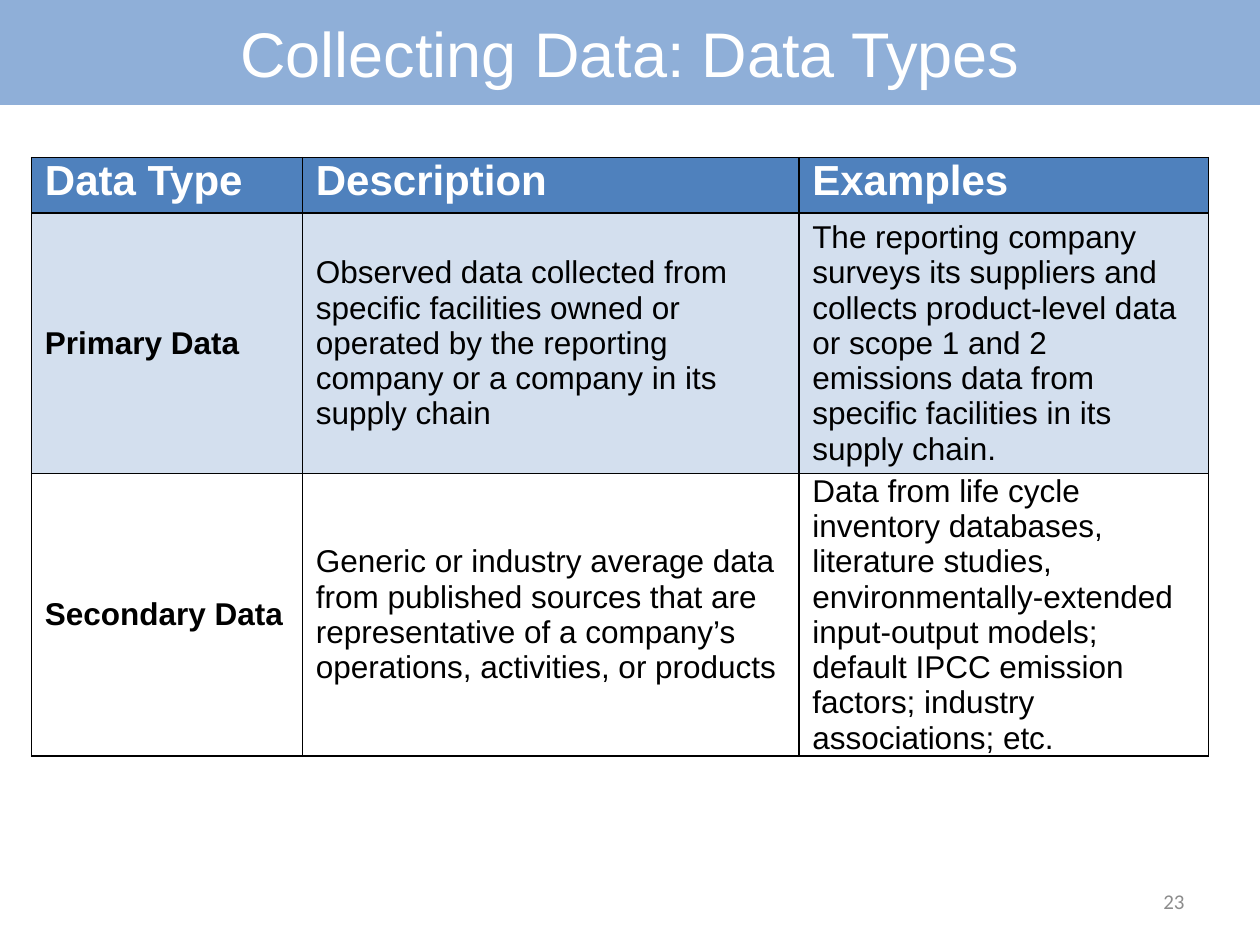
from lxml import etree
from pptx import Presentation
from pptx.dml.color import RGBColor
from pptx.enum.text import MSO_ANCHOR, MSO_AUTO_SIZE, PP_ALIGN
from pptx.oxml.ns import qn
from pptx.util import Pt

COLUMN_WIDTHS = [154.8, 283.7, 234]
ROW_HEIGHTS = [31.7, 149, 149]
DATA_TYPES = [
    ("Data Type", "Description", "Examples"),
    ("Primary Data",
     "Observed data collected from specific facilities owned or operated by the "
     "reporting company or a company in its supply chain",
     "The reporting company surveys its suppliers and collects product-level data or "
     "scope 1 and 2 emissions data from specific facilities in its supply chain."),
    ("Secondary Data",
     "Generic or industry average data from published sources that are representative "
     "of a company’s operations, activities, or products",
     "Data from life cycle inventory databases, literature studies, "
     "environmentally-extended input-output models; default IPCC emission factors; "
     "industry associations; etc."),
]
ROW_FILLS = ["4F81BD", "D3DFEE", None]


def rgb(color):
    return RGBColor.from_string(color)


def style(paragraph, size, color, font="Arial", bold=False, align=PP_ALIGN.LEFT):
    paragraph.alignment = align
    paragraph.font.name = font
    paragraph.font.size = Pt(size)
    paragraph.font.bold = bold
    paragraph.font.color.rgb = rgb(color)


def add_borders(cell, color="000000", width=1):
    properties = cell._tc.get_or_add_tcPr()
    for position, side in enumerate(("a:lnL", "a:lnR", "a:lnT", "a:lnB")):
        line = etree.Element(qn(side), w=str(Pt(width)))
        fill = etree.SubElement(line, qn("a:solidFill"))
        etree.SubElement(fill, qn("a:srgbClr"), val=color)
        # Borders come before the fill in the cell properties
        properties.insert(position, line)


def place_title(slide, left, top, width, height):
    title = slide.shapes.title
    title.left, title.top, title.width, title.height = map(Pt, (left, top, width, height))
    title.fill.solid()
    title.fill.fore_color.rgb = rgb("8FAFD8")
    frame = title.text_frame
    frame.text = "Collecting Data: Data Types"
    frame.auto_size = MSO_AUTO_SIZE.NONE
    frame.vertical_anchor = MSO_ANCHOR.MIDDLE
    style(frame.paragraphs[0], 36, "FFFFFF", align=PP_ALIGN.CENTER)


def add_data_types(slide, left, top):
    table = slide.shapes.add_table(
        len(ROW_HEIGHTS), len(COLUMN_WIDTHS), Pt(left), Pt(top),
        Pt(sum(COLUMN_WIDTHS)), Pt(sum(ROW_HEIGHTS))).table
    table.horz_banding = False
    for column, width in zip(table.columns, COLUMN_WIDTHS):
        column.width = Pt(width)
    for r, (row, height) in enumerate(zip(table.rows, ROW_HEIGHTS)):
        row.height = Pt(height)
        is_header = r == 0
        for c, cell in enumerate(row.cells):
            cell.text = DATA_TYPES[r][c]
            cell.margin_left = cell.margin_right = Pt(7.7)
            cell.margin_top = cell.margin_bottom = Pt(0)
            cell.vertical_anchor = MSO_ANCHOR.TOP if is_header else MSO_ANCHOR.MIDDLE
            style(cell.text_frame.paragraphs[0], 24 if is_header else 18,
                  "FFFFFF" if is_header else "000000", bold=is_header or c == 0)
            if ROW_FILLS[r]:
                cell.fill.solid()
                cell.fill.fore_color.rgb = rgb(ROW_FILLS[r])
            else:
                cell.fill.background()
            add_borders(cell)


def add_page_number(slide, left, top, width, height):
    frame = slide.shapes.add_textbox(Pt(left), Pt(top), Pt(width), Pt(height)).text_frame
    frame.word_wrap = True
    frame.vertical_anchor = MSO_ANCHOR.MIDDLE
    frame.text = "23"
    style(frame.paragraphs[0], 12, "8C8C8C", font="Calibri", align=PP_ALIGN.RIGHT)


def main():
    deck = Presentation()
    deck.slide_width, deck.slide_height = Pt(720), Pt(540)
    slide = deck.slides.add_slide(deck.slide_layouts[5])
    # Title bar
    place_title(slide, 0, 0, 720, 60)
    # Table of data types
    add_data_types(slide, 18, 90)
    # Page number
    add_page_number(slide, 516, 500.5, 168, 28.75)
    deck.save("out.pptx")


if __name__ == "__main__":
    main()
